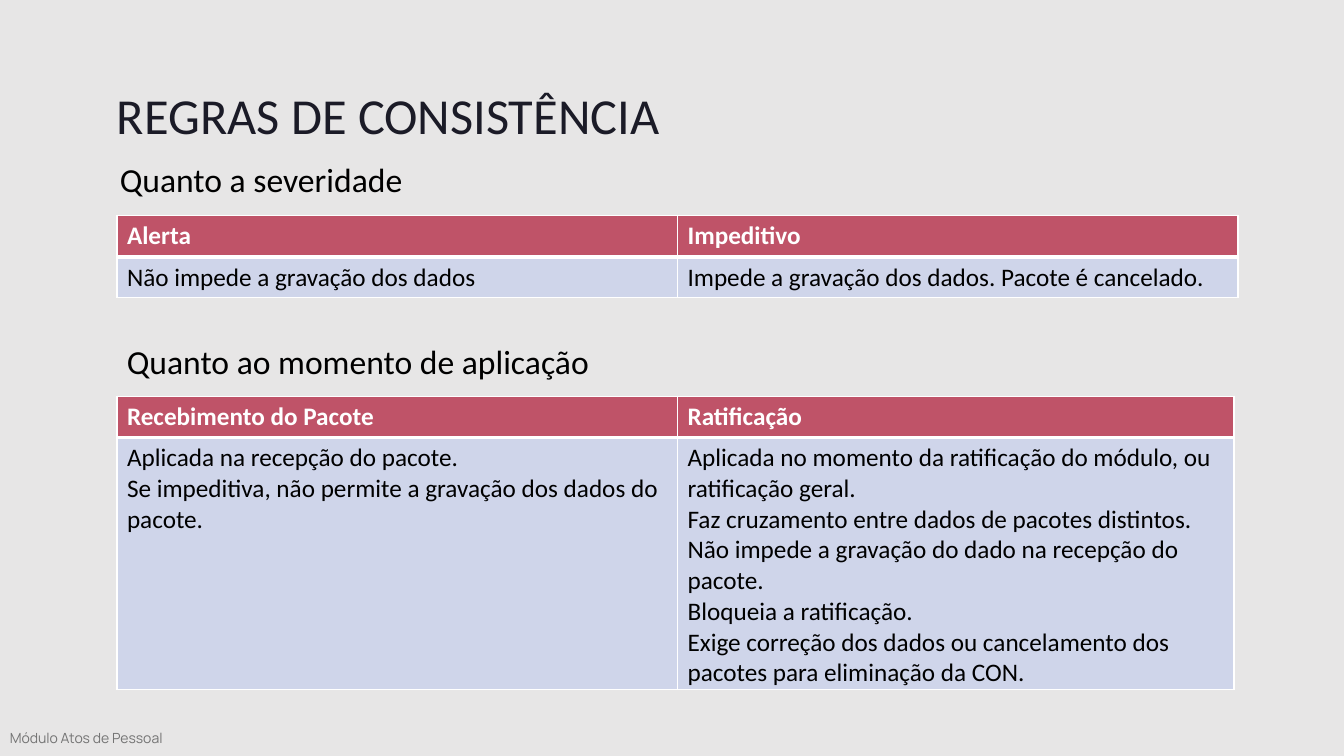
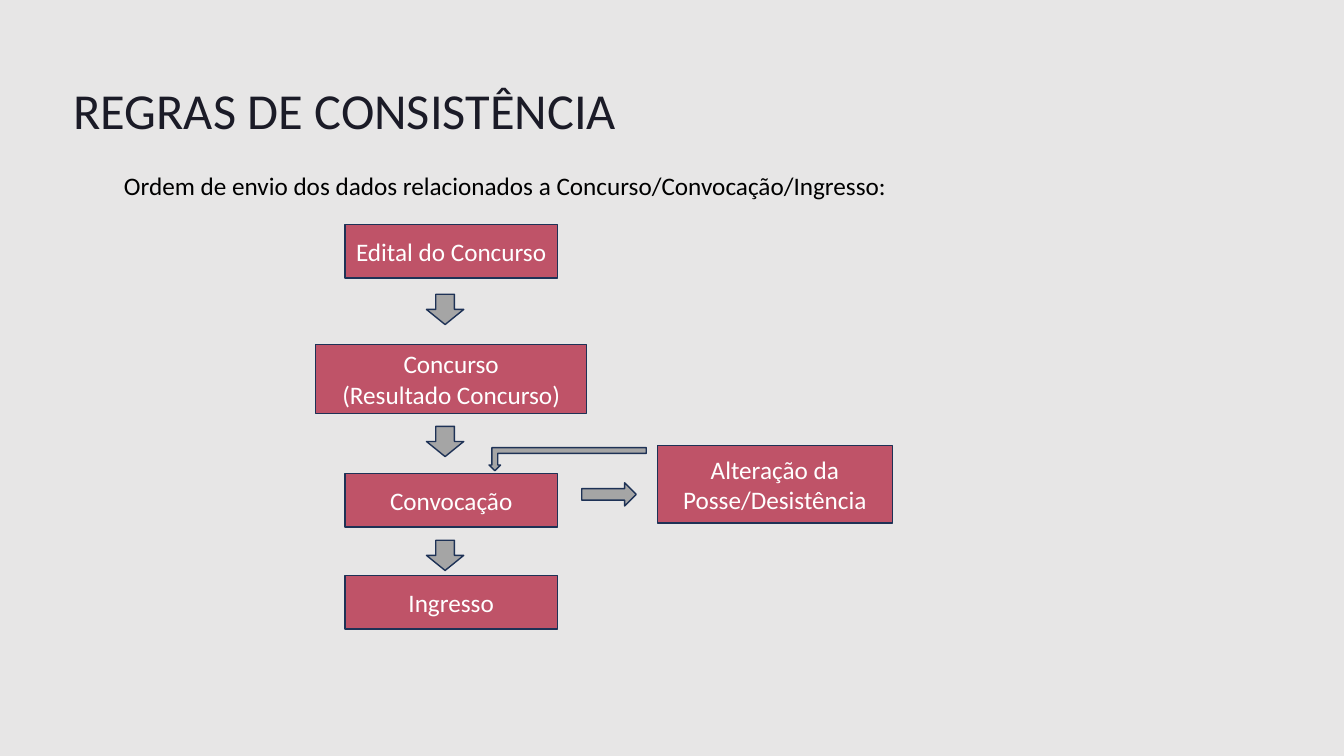
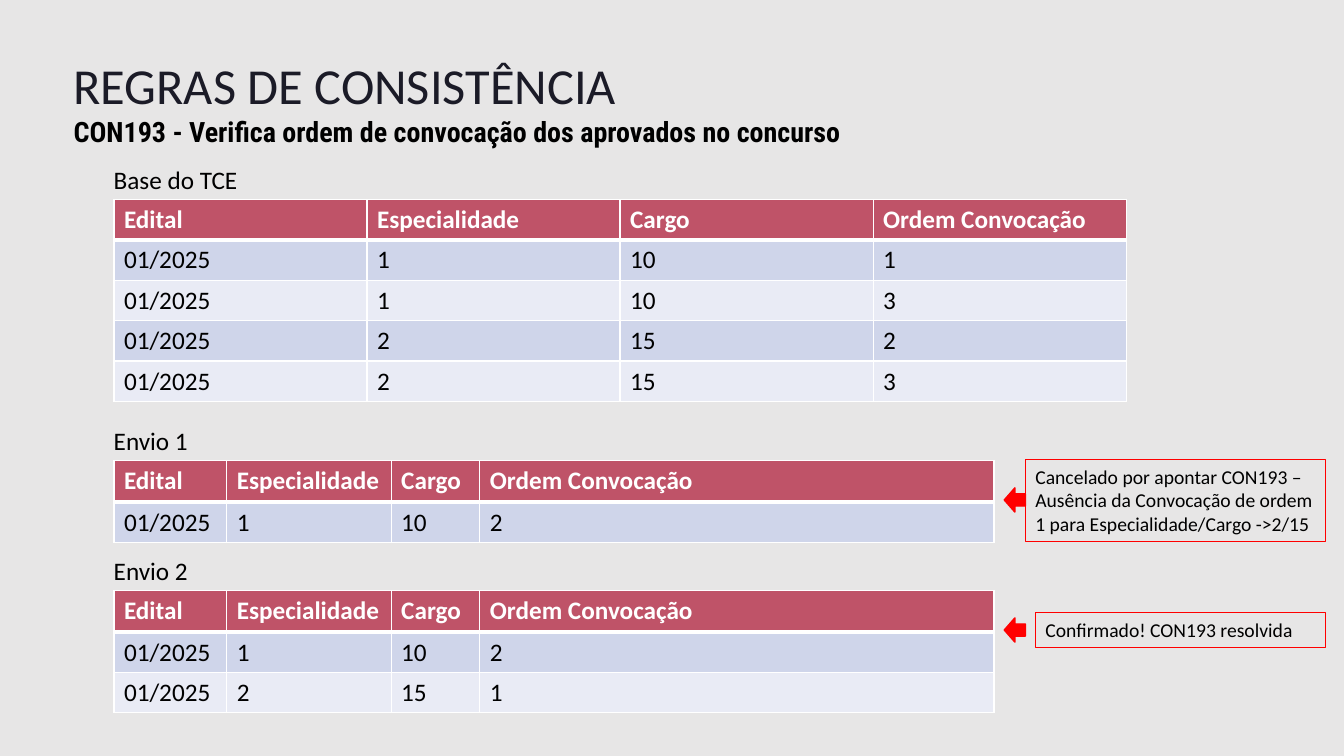
from dataclasses import dataclass

from pptx import Presentation
from pptx.dml.color import RGBColor as Rgb
from pptx.enum.shapes import MSO_SHAPE as Preset
from pptx.enum.text import MSO_ANCHOR as Anchor, PP_ALIGN as Align
from pptx.oxml.ns import qn
from pptx.util import Emu, Pt
from lxml.etree import SubElement

EMU_PER_PX = 9144


@dataclass(frozen=True)
class Style:
    """Typeface, size in points, colour and weight of a run."""
    size: int
    color: str = "000000"
    bold: bool = False
    font: str = "Calibri"


@dataclass(frozen=True)
class Theme:
    """Colours and type styles shared by the slides."""
    background: str = "E7E6E6"
    accent: str = "BF5368"
    outline: str = "1E3256"
    arrow: str = "A5A5A5"
    alert: str = "FF0000"
    grid: str = "FFFFFF"
    bands: tuple = ("CFD5EA", "E9EBF5")
    title: Style = Style(36, "1B1B27")
    heading: Style = Style(24)
    body: Style = Style(18)
    inverse: Style = Style(18, "FFFFFF")
    header: Style = Style(18, "FFFFFF", True)
    rule: Style = Style(20, bold=True, font="Roboto Condensed")
    note: Style = Style(14)
    footer: Style = Style(10, "747474", font="Manrope")


@dataclass(frozen=True)
class Box:
    """Rectangle in px."""
    left: int
    top: int
    width: int
    height: int

    def inner(self, x, y, width, height):
        """Return a box placed relative to this one."""
        return Box(self.left + x, self.top + y, width, height)

    def emu(self):
        """Return the four lengths in EMU."""
        return [px(v) for v in (self.left, self.top, self.width, self.height)]


THEME = Theme()
SUBMISSION_COLUMNS = (112, 163, 88, 510)
RECORD_HEADER = ("Edital", "Especialidade", "Cargo", "Ordem Convocação")


def px(length):
    """Turn px into EMU."""
    return Emu(round(length * EMU_PER_PX))


def write(frame, text, style, align=Align.LEFT, spacing=None):
    """Write one paragraph per line of text."""
    for index, line in enumerate(text.split("\n")):
        paragraph = frame.add_paragraph() if index else frame.paragraphs[0]
        paragraph.alignment = align
        if spacing:
            paragraph.line_spacing = spacing
        run = paragraph.add_run()
        run.text = line
        run.font.name = style.font
        run.font.size = Pt(style.size)
        run.font.bold = style.bold
        run.font.color.rgb = Rgb.from_string(style.color)


def add_label(slide, box, text, style, inset=True, wrap=True, spacing=None):
    """Add a text box."""
    frame = slide.shapes.add_textbox(*box.emu()).text_frame
    frame.word_wrap = wrap
    if not inset:
        frame.margin_left = frame.margin_right = 0
        frame.margin_top = frame.margin_bottom = 0
    write(frame, text, style, spacing=spacing)


def add_figure(slide, preset, box, fill, line, line_width=1, turn=0):
    """Add a flat preset shape with an optional fill."""
    figure = slide.shapes.add_shape(preset, *box.emu())
    figure.shadow.inherit = False
    figure.rotation = turn
    if fill:
        figure.fill.solid()
        figure.fill.fore_color.rgb = Rgb.from_string(fill)
    else:
        figure.fill.background()
    figure.line.color.rgb = Rgb.from_string(line)
    figure.line.width = Pt(line_width)
    return figure


def add_borders(cell, top, bottom):
    """Draw the cell's grid lines, given top and bottom widths in points."""
    properties = cell._tc.get_or_add_tcPr()
    for side, width in (("L", 1), ("R", 1), ("T", top), ("B", bottom)):
        edge = SubElement(properties, qn(f"a:ln{side}"), w=str(Pt(width)))
        paint = SubElement(edge, qn("a:solidFill"))
        SubElement(paint, qn("a:srgbClr"), val=THEME.grid)


def add_grid(slide, box, columns, records, header_height=41):
    """Add a banded table whose data rows share the height under the header."""
    grid = slide.shapes.add_table(len(records), len(columns), *box.emu()).table
    grid.horz_banding = False
    for column, width in zip(grid.columns, columns):
        column.width = px(width)
    data_height = (box.height - header_height) / (len(records) - 1)
    for r, record in enumerate(records):
        grid.rows[r].height = px(data_height if r else header_height)
        fill = THEME.bands[(r - 1) % 2] if r else THEME.accent
        for c, value in enumerate(record):
            cell = grid.cell(r, c)
            add_borders(cell, 3 if r == 1 else 1, 1 if r else 3)
            cell.fill.solid()
            cell.fill.fore_color.rgb = Rgb.from_string(fill)
            write(cell.text_frame, value, THEME.body if r else THEME.header)


def add_captioned_grid(slide, box, caption, columns, records, header_height=41):
    """Add a record table with its caption above."""
    add_grid(slide, box, columns, (RECORD_HEADER, *records), header_height)
    add_label(slide, box.inner(-10, -40, 327, 40), caption, THEME.body)


def add_callout(slide, box, text, text_width):
    """Add a red note at the right of the box and an arrow at its left."""
    note_box = box.inner(box.width - text_width, 0, text_width, box.height)
    note = add_figure(slide, Preset.RECTANGLE, note_box, None, THEME.alert, 0.75)
    note.text_frame.word_wrap = True
    note.text_frame.vertical_anchor = Anchor.TOP
    write(note.text_frame, text, THEME.note)
    pointer = box.inner(0, (box.height - 24) // 2, 21, 24)
    add_figure(slide, Preset.RIGHT_ARROW, pointer, THEME.alert, THEME.alert, turn=180)


def add_step(slide, box, text):
    """Add one step of the flow."""
    step = add_figure(slide, Preset.RECTANGLE, box, THEME.accent, THEME.outline)
    step.text_frame.word_wrap = True
    step.text_frame.vertical_anchor = Anchor.MIDDLE
    write(step.text_frame, text, THEME.inverse, Align.CENTER)


def add_flow(slide, box):
    """Add the sending order as steps down one axis and a side branch."""
    steps = (
        (0, 211, 53, "Edital do Concurso"),
        (119, 269, 68, "Concurso\n(Resultado Concurso)"),
        (247, 211, 53, "Convocação"),
        (348, 211, 53, "Ingresso"),
    )
    widest = max(width for _, width, _, _ in steps)
    for top, width, height, text in steps:
        add_step(slide, box.inner((widest - width) // 2, top, width, height), text)
    add_step(slide, box.inner(339, 219, 233, 77), "Alteração da Posse/Desistência")
    arrows = [(Preset.DOWN_ARROW, (110, top, 37, 30), 0) for top in (69, 200, 313)]
    arrows.append((Preset.RIGHT_ARROW, (264, 256, 54, 23), 0))
    arrows.append((Preset.BENT_UP_ARROW, (172, 221, 156, 23), 180))
    for preset, place, turn in arrows:
        add_figure(slide, preset, box.inner(*place), THEME.arrow, THEME.outline, turn=turn)


def new_slide(deck, title_left, title_top):
    """Add a blank slide with the shared background and title."""
    slide = deck.slides.add_slide(deck.slide_layouts[6])
    slide.background.fill.solid()
    slide.background.fill.fore_color.rgb = Rgb.from_string(THEME.background)
    add_label(slide, Box(title_left, title_top, 671, 65), "REGRAS DE CONSISTÊNCIA",
              THEME.title, inset=False, wrap=False, spacing=Pt(46.2))
    return slide


def build_rule_types(deck):
    """Build the slide on severity and moment of application."""
    slide = new_slide(deck, 116, 79)
    add_label(slide, Box(0, 721, 1274, 22), "Módulo Atos de Pessoal",
              THEME.footer, spacing=0.9)
    add_label(slide, Box(109, 153, 707, 50), "Quanto a severidade", THEME.heading)
    add_grid(slide, Box(116, 214, 1112, 81), (556, 556), (
        ("Alerta", "Impeditivo"),
        ("Não impede a gravação dos dados",
         "Impede a gravação dos dados. Pacote é cancelado."),
    ))
    add_label(slide, Box(116, 333, 707, 50), "Quanto ao momento de aplicação",
              THEME.heading)
    add_grid(slide, Box(116, 393, 1108, 291), (556, 552), (
        ("Recebimento do Pacote", "Ratificação"),
        ("Aplicada na recepção do pacote.\n"
         "Se impeditiva, não permite a gravação dos dados do pacote.",
         "Aplicada no momento da ratificação do módulo, ou ratificação geral.\n"
         "Faz cruzamento entre dados de pacotes distintos.\n"
         "Não impede a gravação do dado na recepção do pacote.\n"
         "Bloqueia a ratificação.\n"
         "Exige correção dos dados ou cancelamento dos pacotes "
         "para eliminação da CON."),
    ))


def build_sending_order(deck):
    """Build the slide on the sending order."""
    slide = new_slide(deck, 73, 74)
    add_label(slide, Box(123, 169, 1167, 44),
              "Ordem de envio dos dados relacionados a Concurso/Convocação/Ingresso:",
              THEME.body, inset=False)
    add_flow(slide, Box(313, 223, 572, 401))


def build_call_check(deck):
    """Build the slide on rule CON193."""
    slide = new_slide(deck, 73, 49)
    add_label(slide, Box(73, 114, 1217, 33),
              "CON193 - Verifica ordem de convocação dos aprovados no concurso",
              THEME.rule, inset=False, spacing=Pt(23.7))
    add_captioned_grid(slide, Box(113, 198, 1004, 200), "Base do TCE", (251,) * 4, (
        ("01/2025", "1", "10", "1"),
        ("01/2025", "1", "10", "3"),
        ("01/2025", "2", "15", "2"),
        ("01/2025", "2", "15", "3"),
    ), header_height=40)
    first_call = ("01/2025", "1", "10", "2")
    add_captioned_grid(slide, Box(113, 457, 873, 81), "Envio 1",
                       SUBMISSION_COLUMNS, (first_call,))
    add_callout(slide, Box(996, 456, 319, 81),
                "Cancelado por apontar CON193 – Ausência da Convocação de ordem 1 "
                "para Especialidade/Cargo ->2/15", 298)
    add_captioned_grid(slide, Box(113, 586, 873, 121), "Envio 2",
                       SUBMISSION_COLUMNS, (first_call, ("01/2025", "2", "15", "1")))
    add_callout(slide, Box(996, 608, 319, 34), "Confirmado! CON193 resolvida", 288)


def main():
    """Build and save the deck."""
    deck = Presentation()
    deck.slide_width, deck.slide_height = px(1333), px(750)
    build_rule_types(deck)
    build_sending_order(deck)
    build_call_check(deck)
    deck.save("out.pptx")


if __name__ == "__main__":
    main()
